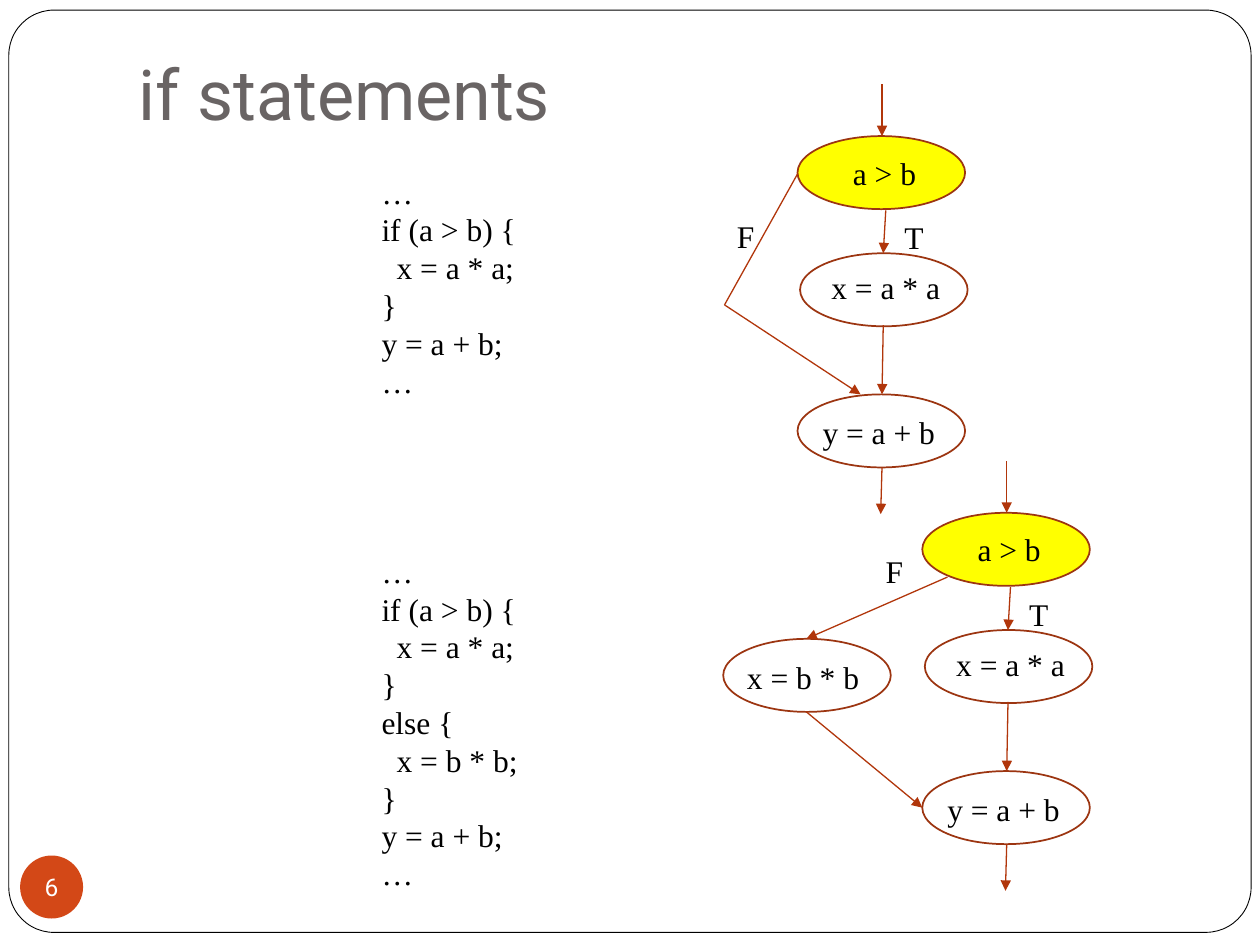
from dataclasses import dataclass

from lxml.etree import SubElement
from pptx import Presentation
from pptx.dml.color import RGBColor as RGB
from pptx.enum.shapes import MSO_CONNECTOR as CONNECTOR, MSO_SHAPE as SHAPE
from pptx.enum.text import MSO_ANCHOR as ANCHOR, PP_ALIGN as ALIGN
from pptx.oxml.ns import qn
from pptx.util import Inches, Pt


@dataclass(frozen=True)
class Theme:
    white = RGB(0xFF, 0xFF, 0xFF)
    black = RGB(0, 0, 0)
    title = RGB(0x69, 0x64, 0x64)
    badge = RGB(0xD3, 0x48, 0x17)
    decision = RGB(0xFF, 0xFF, 0x00)
    outline = RGB(0x9C, 0x35, 0x11)
    arrow = RGB(0xB1, 0x36, 0x0B)
    title_font = "Roboto"
    code_font = "Times New Roman"
    title_size = Pt(40)
    code_size = Pt(18)
    code_spacing = Pt(21.6)
    badge_size = Pt(14)


theme = Theme()
CODE_INDENT = Inches(0.12)
NODE_SIZE = Inches(1.33), Inches(0.58)

presentation = Presentation()
presentation.slide_width, presentation.slide_height = Inches(10), Inches(7.5)
slide = presentation.slides.add_slide(presentation.slide_layouts[5])
shapes = slide.shapes


def add_filled_shape(kind, left, top, width, height, fill=None, line=None, line_width=1):
    shape = shapes.add_shape(kind, left, top, width, height)
    shape.shadow.inherit = False
    if fill is None:
        shape.fill.background()
    else:
        shape.fill.solid()
        shape.fill.fore_color.rgb = fill
    if line is None:
        shape.line.fill.background()
    else:
        shape.line.color.rgb = line
        shape.line.width = Pt(line_width)
    return shape


def add_code(lines, left, top, width, height):
    """Add a text box of code; leading spaces become a paragraph indent."""
    text_frame = shapes.add_textbox(left, top, width, height).text_frame
    text_frame.word_wrap = True
    text_frame.text = "\n".join(line.strip() for line in lines)
    for line, paragraph in zip(lines, text_frame.paragraphs):
        paragraph.line_spacing = theme.code_spacing
        paragraph.font.name = theme.code_font
        paragraph.font.size = theme.code_size
        paragraph.font.color.rgb = theme.black
        if line.startswith(" "):
            paragraph._p.get_or_add_pPr().set("marL", str(CODE_INDENT))


# Frame, behind everything else
frame = add_filled_shape(SHAPE.ROUNDED_RECTANGLE, Inches(0.07), Inches(0.08),
                         Inches(9.86), Inches(7.32), theme.white, theme.black, 0.5)
frame.adjustments[0] = 0.049
shapes._spTree.insert(2, frame._element)

# Title
title = shapes.title
title.left, title.top = Inches(1), Inches(0.3)
title.width, title.height = Inches(8.5), Inches(0.87)
title_frame = title.text_frame
title_frame.text = "if statements"
title_frame.vertical_anchor = ANCHOR.BOTTOM
title_frame.margin_bottom = Inches(0.1)
paragraph = title_frame.paragraphs[0]
paragraph.alignment = ALIGN.LEFT
font = paragraph.runs[0].font
font.name, font.size, font.color.rgb = theme.title_font, theme.title_size, theme.title

# Slide number badge
badge = add_filled_shape(SHAPE.OVAL, Inches(0.16), Inches(6.79),
                         Inches(0.5), Inches(0.5), theme.badge)
badge_frame = badge.text_frame
badge_frame.text = "6"
badge_frame.word_wrap = False
badge_frame.vertical_anchor = ANCHOR.MIDDLE
badge_frame.margin_left = badge_frame.margin_right = 0
badge_frame.margin_top = badge_frame.margin_bottom = 0
paragraph = badge_frame.paragraphs[0]
paragraph.alignment = ALIGN.CENTER
font = paragraph.runs[0].font
font.name, font.size, font.color.rgb = theme.title_font, theme.badge_size, theme.white

# Code listings
if_block = ["…", "if (a > b) {", "  x = a * a;", "}"]
else_block = ["else {", "  x = b * b;", "}"]
after_block = ["y = a + b;", "…"]
add_code(if_block + after_block, Inches(2.93), Inches(1.32), Inches(2.17), Inches(1.92))
add_code(if_block + else_block + after_block,
         Inches(2.93), Inches(4.33), Inches(2.17), Inches(2.83))

# Flowcharts: the true path is the same in both, the second one is shifted
true_nodes = [(6.33, 1.08, theme.decision), (6.35, 2.01, None), (6.33, 3.13, None)]
true_labels = [("a > b", 6.67, 1.17, 0.92), ("x = a * a", 6.5, 2.08, 1.22),
               ("y = a + b", 6.43, 3.23, 1.17), ("T", 7.08, 1.68, 0.32)]
true_arrows = [(7, 0.67, 7, 1.08), (7.03, 1.67, 7.01, 2.01),
               (7.01, 2.58, 7, 3.13), (7, 3.71, 6.99, 4.08)]

nodes = [(5.74, 5.07, None)]
labels = [("F", 5.75, 1.67, 0.32), ("F", 6.93, 4.33, 0.32), ("x = b * b", 5.83, 5.17, 1.24)]
arrows = [(5.75, 2.42, 6.83, 3.13), (7.52, 4.58, 6.4, 5.07), (6.4, 5.65, 7.32, 6.41)]
for dx, dy in [(0, 0), (0.99, 2.99)]:
    nodes += [(x + dx, y + dy, fill) for x, y, fill in true_nodes]
    labels += [(text, x + dx, y + dy, width) for text, x, y, width in true_labels]
    arrows += [(x1 + dx, y1 + dy, x2 + dx, y2 + dy) for x1, y1, x2, y2 in true_arrows]
false_branch = (5.75, 2.42, 6.33, 1.38)

for x, y, fill in nodes:
    add_filled_shape(SHAPE.OVAL, Inches(x), Inches(y), *NODE_SIZE, fill, theme.outline)

for ends in arrows + [false_branch]:
    connector = shapes.add_connector(CONNECTOR.STRAIGHT, *(Inches(end) for end in ends))
    connector.line.color.rgb = theme.arrow
    connector.line.width = Pt(0.75)
    if ends != false_branch:
        SubElement(connector.line._get_or_add_ln(), qn("a:tailEnd"), type="triangle")
    SubElement(connector._element.spPr, qn("a:effectLst"))

for text, x, y, width in labels:
    add_code([text], Inches(x), Inches(y), Inches(width), Inches(0.4))

presentation.save("out.pptx")
